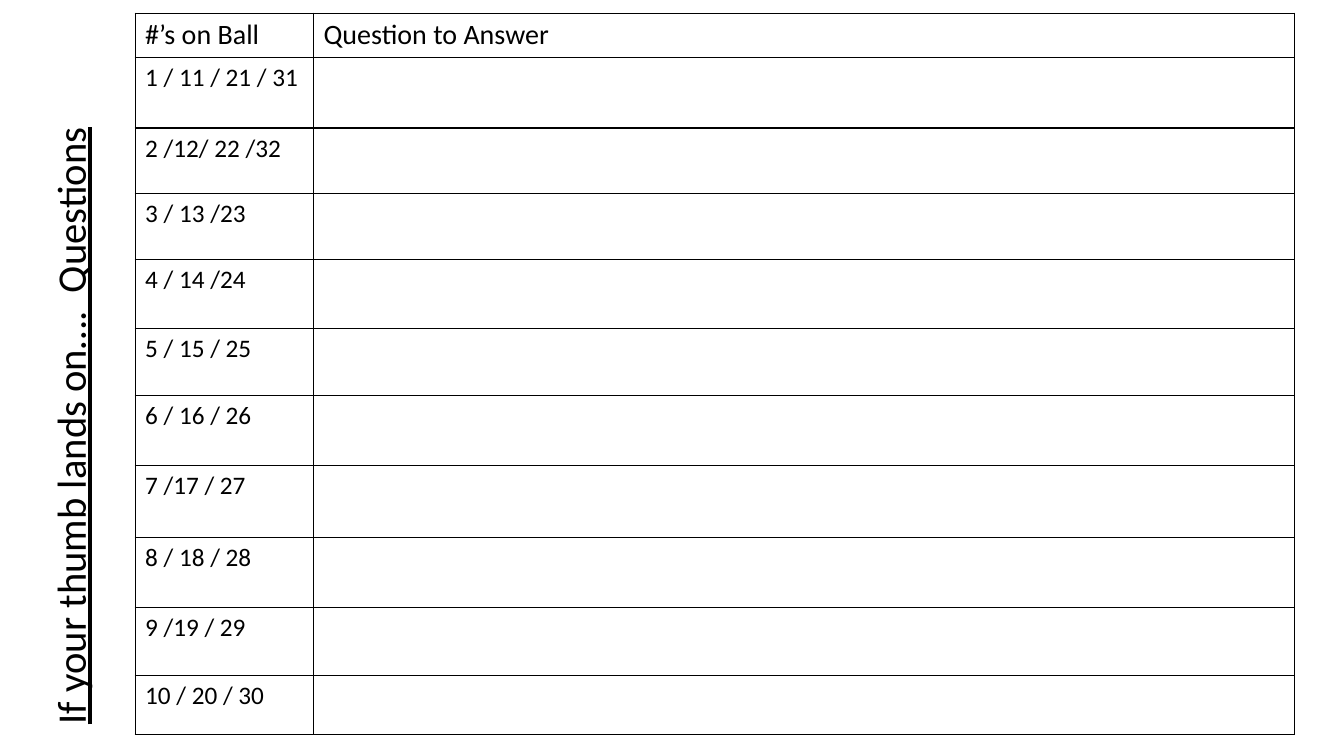
"""Build the slide that pairs ball numbers with questions to answer."""
from pptx import Presentation
from pptx.dml.color import RGBColor
from pptx.enum.text import MSO_ANCHOR, PP_ALIGN
from pptx.oxml import parse_xml
from pptx.oxml.ns import nsdecls
from pptx.util import Inches, Pt

TITLE = "If your thumb lands on….  Questions"
HEAD = ("#’s on Ball", "Question to Answer")
BALLS = [
    "1 / 11 / 21 / 31",
    "2 /12/ 22 /32",
    "3 / 13 /23",
    "4 / 14 /24",
    "5 / 15 / 25",
    "6 / 16 / 26",
    "7 /17 / 27",
    "8 / 18 / 28",
    "9 /19 / 29",
    "10 / 20 / 30",
]
ROWS = [(HEAD, 0.43)] + [
    ((ball, ""), high)
    for ball, high in zip(BALLS, (0.7, 0.65, 0.65, 0.69, 0.66, 0.7, 0.71, 0.7, 0.67, 0.59))
]
COLS = (1.77, 9.73)
THEME = {"font": "Calibri", "ink": "000000", "title": 29, "head": 20, "body": 18, "line": 1}


def write(frame, text, size, under=False, space=1.0):
    frame.word_wrap = True
    frame.vertical_anchor = MSO_ANCHOR.TOP
    para = frame.paragraphs[0]
    para.alignment = PP_ALIGN.LEFT
    para.line_spacing = space
    run = para.add_run()
    run.text = text
    font = run.font
    font.name = THEME["font"]
    font.size = Pt(size)
    font.bold = False
    font.underline = under
    font.color.rgb = RGBColor.from_string(THEME["ink"])


def frame_cell(cell):
    props = cell._tc.get_or_add_tcPr()
    for spot, side in enumerate(("lnL", "lnR", "lnT", "lnB")):
        props.insert(spot, parse_xml(
            f'<a:{side} {nsdecls("a")} w="{Pt(THEME["line"])}"><a:solidFill>'
            f'<a:srgbClr val="{THEME["ink"]}"/></a:solidFill></a:{side}>'))


def add_grid(slide):
    high = sum(size for _, size in ROWS)
    grid = slide.shapes.add_table(len(ROWS), len(COLS), Inches(1.34), Inches(0.13),
                                  Inches(sum(COLS)), Inches(high)).table
    grid.horz_banding = False
    for col, wide in zip(grid.columns, COLS):
        col.width = Inches(wide)
    for num, (texts, size) in enumerate(ROWS):
        grid.rows[num].height = Inches(size)
        for cell, text in zip(grid.rows[num].cells, texts):
            cell.fill.background()
            frame_cell(cell)
            if text:
                write(cell.text_frame, text, THEME["body" if num else "head"])


def main():
    deck = Presentation()
    deck.slide_width, deck.slide_height = Inches(13.33), Inches(7.5)
    slide = deck.slides.add_slide(deck.slide_layouts[6])
    add_grid(slide)
    title = slide.shapes.add_textbox(Inches(-4.23), Inches(1.71), Inches(10.26), Inches(0.89))
    title.rotation = 270
    write(title.text_frame, TITLE, THEME["title"], under=True, space=0.9)
    deck.save("out.pptx")


if __name__ == "__main__":
    main()
